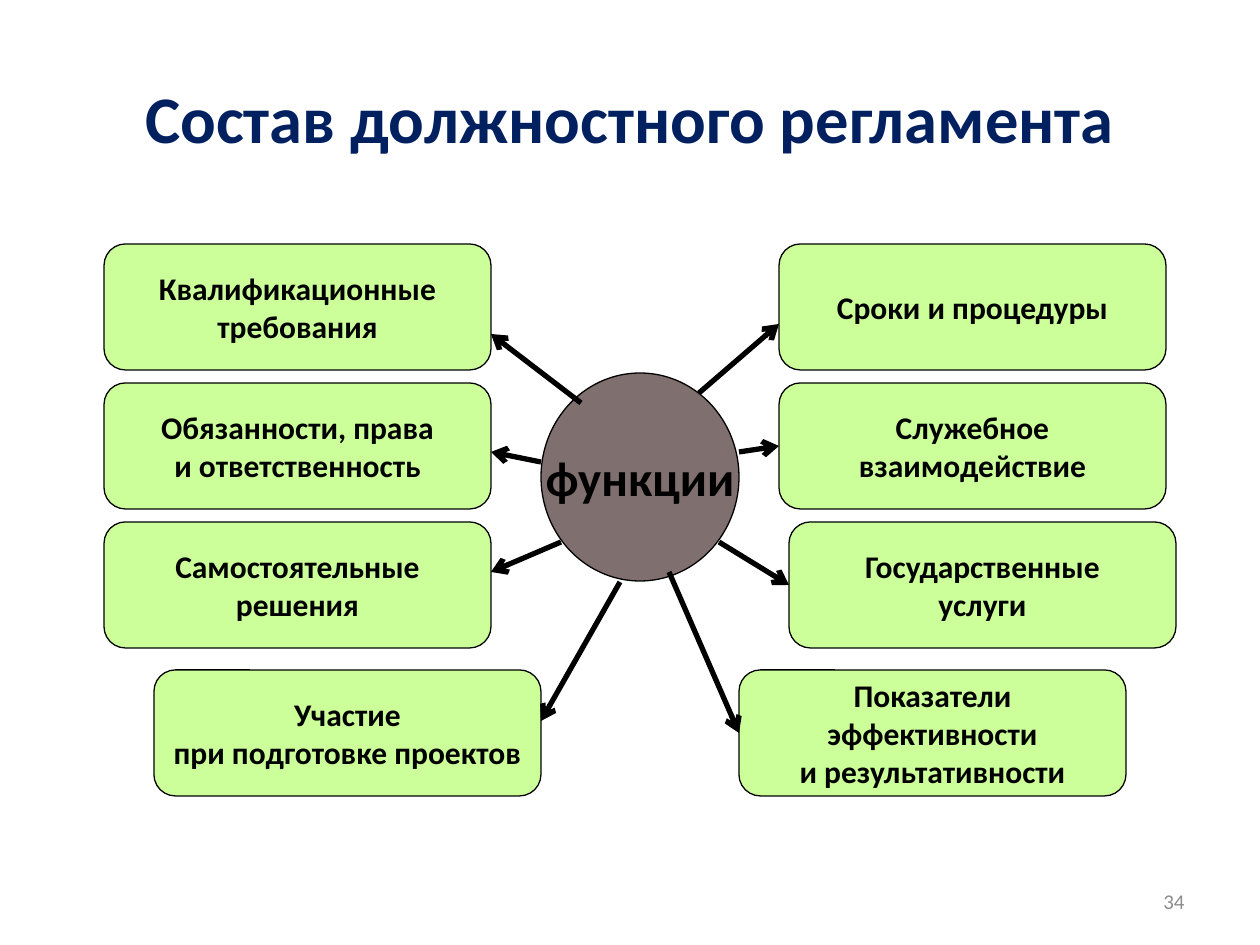
from lxml.etree import SubElement
from pptx import Presentation
from pptx.dml.color import RGBColor
from pptx.enum.shapes import MSO_CONNECTOR, MSO_SHAPE
from pptx.enum.text import MSO_ANCHOR, PP_ALIGN
from pptx.oxml.ns import qn
from pptx.util import Pt

PX = 914400 / 126
NAVY = RGBColor(0x00, 0x20, 0x60)
BLACK = RGBColor(0, 0, 0)
GREEN = RGBColor(0xCC, 0xFF, 0x99)
TAUPE = RGBColor(0x7F, 0x6F, 0x6F)
GRAY = RGBColor(0x8C, 0x8C, 0x8C)

CARD_W, CARD_H = 387, 126
ROWS = [0, 139, 278, 426]
# Each card: text, left edge, arrow start, height of arrow tip.
# Positions are relative to the diagram box.
LEFT = [
    ("Квалификационные\nтребования", 0, (477, 159), 90),
    ("Обязанности, права\nи ответственность", 0, (437, 218), 208),
    ("Самостоятельные\nрешения", 0, (457, 298), 328),
    ("Участие\nпри подготовке проектов", 50, (516, 338), 477),
]
RIGHT = [
    ("Сроки и процедуры", 675, (595, 149), 80),
    ("Служебное\nвзаимодействие", 675, (635, 208), 198),
    ("Государственные\nуслуги", 685, (615, 298), 338),
    ("Показатели\nэффективности\nи результативности", 635, (565, 328), 487),
]


def emu(*vals):
    return [round(v * PX) for v in vals]


def write(frame, text, size, color, bold=True, align=PP_ALIGN.CENTER):
    frame.text = text
    frame.vertical_anchor = MSO_ANCHOR.MIDDLE
    for para in frame.paragraphs:
        para.alignment = align
        for run in para.runs:
            font = run.font
            font.name, font.size, font.bold = "Calibri", Pt(size), bold
            font.color.rgb = color


def add_node(slide, kind, box, fill, text, size):
    node = slide.shapes.add_shape(kind, *emu(*box))
    node.shadow.inherit = False
    node.fill.solid()
    node.fill.fore_color.rgb = fill
    node.line.color.rgb = BLACK
    node.line.width = Pt(0.75)
    write(node.text_frame, text, size, BLACK)
    node.text_frame.word_wrap = False
    return node


def add_arrow(slide, start, end):
    arrow = slide.shapes.add_connector(
        MSO_CONNECTOR.STRAIGHT, *emu(*start, *end))
    arrow.line.color.rgb = BLACK
    arrow.line.width = Pt(3)
    SubElement(arrow.line._get_or_add_ln(), qn("a:tailEnd"), type="arrow")
    SubElement(arrow._element.spPr, qn("a:effectLst"))
    return arrow


def add_title(slide, box):
    title = slide.shapes.title
    title.left, title.top, title.width, title.height = emu(*box)
    write(title.text_frame, "Состав должностного регламента", 38, NAVY)


def add_map(slide, x, y):
    """Place the central circle, the cards around it and their arrows."""
    add_node(slide, MSO_SHAPE.OVAL, (x + 437, y + 129, 198, 208),
             TAUPE, "функции", 28)
    links = []
    for cards, edge, site in ((LEFT, CARD_W, 3), (RIGHT, 0, 1)):
        for (text, left, start, tip), top in zip(cards, ROWS):
            card = add_node(slide, MSO_SHAPE.ROUNDED_RECTANGLE,
                            (x + left, y + top, CARD_W, CARD_H),
                            GREEN, text, 18)
            card.adjustments[0] = 0.17
            middle = abs(tip - top - CARD_H / 2) < 5
            links.append((card, start, (left + edge, tip), site, middle))
    for card, start, end, site, middle in links:
        arrow = add_arrow(slide, (x + start[0], y + start[1]),
                          (x + end[0], y + end[1]))
        if middle:
            arrow.end_connect(card, site)


def add_number(slide, box):
    frame = slide.shapes.add_textbox(*emu(*box)).text_frame
    frame.word_wrap = True
    write(frame, "34", 12, GRAY, False, PP_ALIGN.RIGHT)


def main():
    deck = Presentation()
    deck.slide_width, deck.slide_height = emu(1260, 945)
    slide = deck.slides.add_slide(deck.slide_layouts[5])
    add_title(slide, (63, 38, 1134, 158))
    add_map(slide, 104, 244)
    add_number(slide, (903, 876, 294, 50))
    deck.save("out.pptx")


if __name__ == "__main__":
    main()
